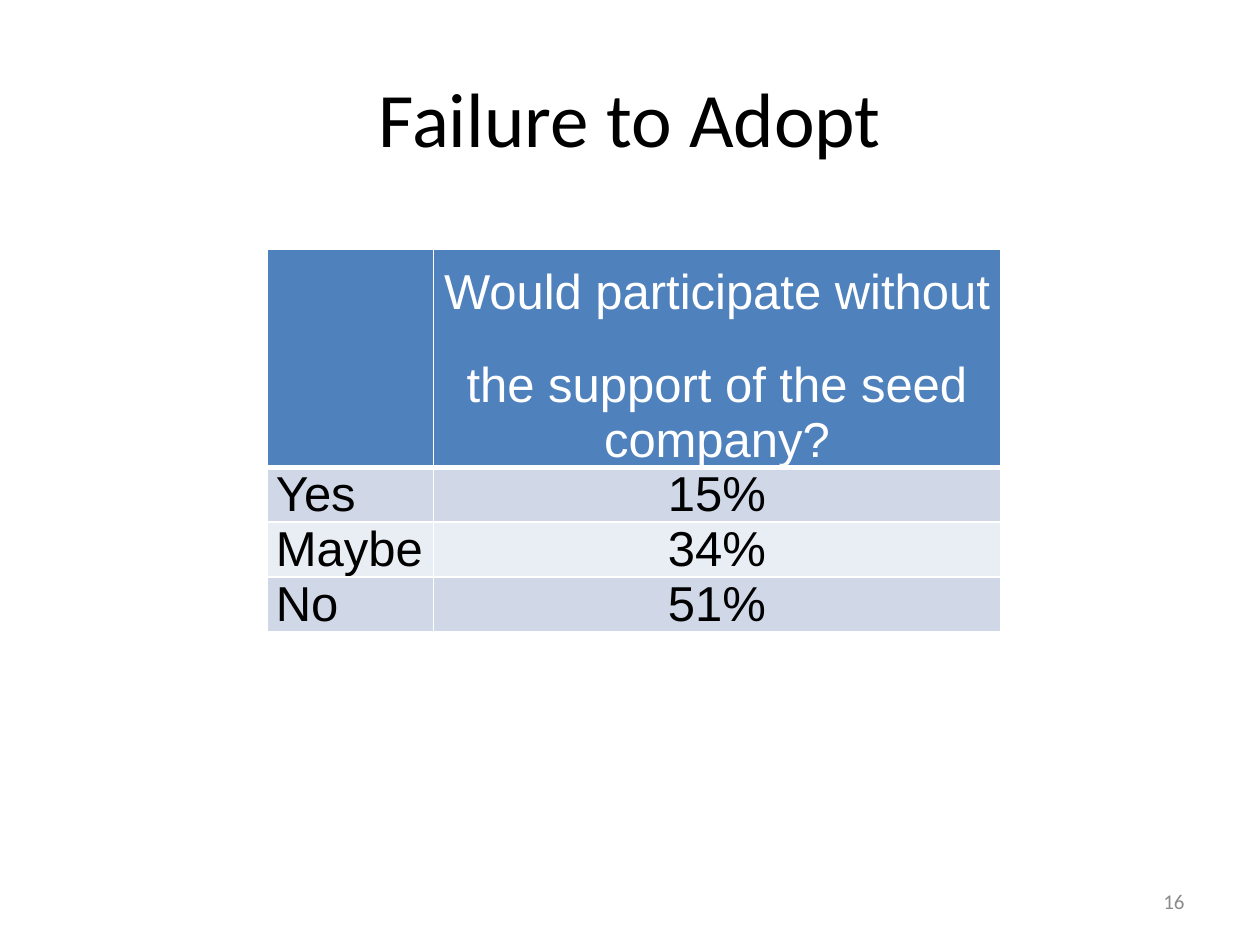
from lxml import etree
from pptx import Presentation
from pptx.dml.color import RGBColor
from pptx.enum.text import MSO_ANCHOR, PP_ALIGN
from pptx.oxml.ns import qn
from pptx.util import Inches, Pt

LEFT, CENTER, RIGHT = PP_ALIGN.LEFT, PP_ALIGN.CENTER, PP_ALIGN.RIGHT
MIDDLE, BOTTOM = MSO_ANCHOR.MIDDLE, MSO_ANCHOR.BOTTOM
BLACK = RGBColor(0x00, 0x00, 0x00)
WHITE = RGBColor(0xFF, 0xFF, 0xFF)
GRAY = RGBColor(0x8C, 0x8C, 0x8C)
BLUE = RGBColor(0x4F, 0x81, 0xBD)
BANDS = (RGBColor(0xD0, 0xD8, 0xE8), RGBColor(0xE9, 0xED, 0xF4))

LABELS = [
    ("Failure to Adopt", (0.5, 0.3, 9, 1.25), CENTER,
     {"name": "Calibri", "size": Pt(44)}, BLACK),
    ("16", (7.17, 6.95, 2.33, 0.4), RIGHT,
     {"name": "Calibri", "size": Pt(12)}, GRAY),
]
ANSWERS = [
    ("", "Would participate without \vthe support of the seed company?"),
    ("Yes", "15%"),
    ("Maybe", "34%"),
    ("No", "51%"),
]
TABLE_LEFT, TABLE_TOP = 2.12, 1.98
COLUMN_WIDTHS = (1.32, 4.5)
HEADER_HEIGHT, ROW_HEIGHT = 1.73, 0.43
CELL_FONT = {"name": "Arial", "size": Pt(28), "bold": False}
CELL_FORMAT = {"vertical_anchor": BOTTOM, "margin_left": Inches(0.07),
               "margin_right": Inches(0.07), "margin_top": 0, "margin_bottom": 0}


def apply(target, values):
    for name, value in values.items():
        setattr(target, name, value)


def style_paragraph(para, align, font, color):
    para.alignment = align
    for span in para.runs:
        apply(span.font, font)
        span.font.color.rgb = color


def add_label(page, text, place, align, font, color):
    box = page.shapes.add_textbox(*(Inches(value) for value in place))
    apply(box.text_frame, {"word_wrap": True, "vertical_anchor": MIDDLE})
    box.text_frame.text = text
    style_paragraph(box.text_frame.paragraphs[0], align, font, color)


def add_borders(cell, bottom_width):
    properties = cell._tc.get_or_add_tcPr()
    for side, width in (("L", 1), ("R", 1), ("T", 1), ("B", bottom_width)):
        line = etree.SubElement(properties, qn(f"a:ln{side}"), w=str(Pt(width)))
        fill = etree.SubElement(line, qn("a:solidFill"))
        etree.SubElement(fill, qn("a:srgbClr"), val=str(WHITE))


def add_answer_table(page):
    heights = [HEADER_HEIGHT] + [ROW_HEIGHT] * (len(ANSWERS) - 1)
    table = page.shapes.add_table(
        len(ANSWERS), len(COLUMN_WIDTHS), Inches(TABLE_LEFT), Inches(TABLE_TOP),
        Inches(sum(COLUMN_WIDTHS)), Inches(sum(heights))).table
    for column, width in zip(table.columns, COLUMN_WIDTHS):
        column.width = Inches(width)
    for row_index, (texts, height) in enumerate(zip(ANSWERS, heights)):
        table.rows[row_index].height = Inches(height)
        header = row_index == 0
        for column_index, text in enumerate(texts):
            cell = table.cell(row_index, column_index)
            apply(cell, CELL_FORMAT)
            add_borders(cell, 3 if header else 1)
            cell.fill.solid()
            cell.fill.fore_color.rgb = BLUE if header else BANDS[(row_index - 1) % 2]
            cell.text = text
            style_paragraph(cell.text_frame.paragraphs[0],
                            CENTER if column_index else LEFT,
                            CELL_FONT, WHITE if header else BLACK)


def main():
    deck = Presentation()
    deck.slide_width, deck.slide_height = Inches(10), Inches(7.5)
    page = deck.slides.add_slide(deck.slide_layouts[6])
    add_answer_table(page)
    for label in LABELS:
        add_label(page, *label)
    deck.save("out.pptx")


if __name__ == "__main__":
    main()
